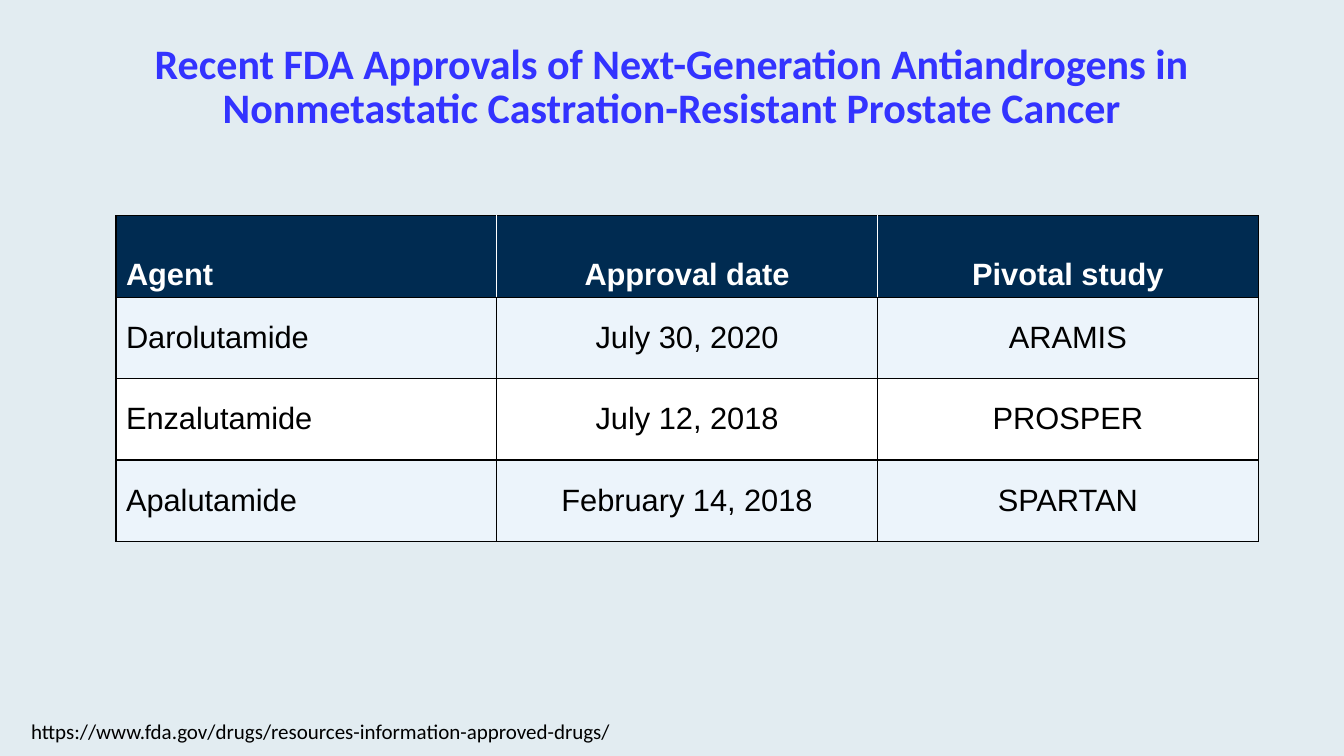
from dataclasses import dataclass

from lxml.etree import SubElement
from pptx import Presentation
from pptx.dml.color import RGBColor
from pptx.enum.text import MSO_ANCHOR, MSO_AUTO_SIZE, PP_ALIGN
from pptx.oxml.ns import qn
from pptx.util import Inches, Pt


@dataclass(frozen=True)
class Theme:
    back: str = "E2ECF1"
    title: str = "3333FF"
    head: str = "002B51"
    band: str = "ECF4FB"
    white: str = "FFFFFF"
    black: str = "000000"
    sans: str = "Calibri"
    grid: str = "Arial"
    large: int = 30
    body: int = 22
    small: int = 15
    rule: int = 1


THEME = Theme()
WIDE, HIGH = Inches(13.33), Inches(7.5)
TITLE = ("Recent FDA Approvals of Next-Generation Antiandrogens in "
         "Nonmetastatic Castration-Resistant Prostate Cancer")
LINK = "https://www.fda.gov/drugs/resources-information-approved-drugs/"
ROWS = [
    ("Agent", "Approval date", "Pivotal study"),
    ("Darolutamide", "July 30, 2020", "ARAMIS"),
    ("Enzalutamide", "July 12, 2018", "PROSPER"),
    ("Apalutamide", "February 14, 2018", "SPARTAN"),
]


def style(para, face, size, color, bold=False):
    para.font.name = face
    para.font.size = Pt(size)
    para.font.bold = bold
    para.font.color.rgb = RGBColor.from_string(color)


def paint(fill, color):
    fill.solid()
    fill.fore_color.rgb = RGBColor.from_string(color)


def edge(cell, sides):
    props = cell._tc.get_or_add_tcPr()
    for spot, (side, color) in enumerate(sides.items()):
        line = SubElement(props, qn(f"a:ln{side}"), w=str(Pt(THEME.rule)))
        fill = SubElement(line, qn("a:solidFill"))
        SubElement(fill, qn("a:srgbClr"), val=color)
        props.insert(spot, line)


def add_title(slide, box):
    shape = slide.shapes.title
    shape.left, shape.top, shape.width, shape.height = box
    frame = shape.text_frame
    frame.text = TITLE
    frame.word_wrap = True
    frame.auto_size = MSO_AUTO_SIZE.NONE
    frame.vertical_anchor = MSO_ANCHOR.MIDDLE
    frame.margin_left = frame.margin_right = 0
    frame.margin_top = frame.margin_bottom = 0
    para = frame.paragraphs[0]
    para.alignment = PP_ALIGN.CENTER
    para.line_spacing = 0.88
    style(para, THEME.sans, THEME.large, THEME.title, True)


def add_grid(slide, box):
    count = len(ROWS[0])
    table = slide.shapes.add_table(len(ROWS), count, *box).table
    for col in table.columns:
        col.width = int(box[2] / count)
    for r, row in enumerate(ROWS):
        table.rows[r].height = int(box[3] / len(ROWS))
        head = r == 0
        shade = THEME.head if head else THEME.band if r % 2 else THEME.white
        inner = THEME.white if head else THEME.black
        for c, text in enumerate(row):
            cell = table.cell(r, c)
            cell.text = text
            cell.vertical_anchor = MSO_ANCHOR.BOTTOM if head else MSO_ANCHOR.MIDDLE
            paint(cell.fill, shade)
            edge(cell, {
                "L": inner if c else THEME.black,
                "R": inner if c < count - 1 else THEME.black,
                "T": THEME.black,
                "B": THEME.black,
            })
            para = cell.text_frame.paragraphs[0]
            para.alignment = PP_ALIGN.CENTER if c else PP_ALIGN.LEFT
            style(para, THEME.grid, THEME.body, inner, head)


def add_source(slide, box):
    frame = slide.shapes.add_textbox(*box).text_frame
    frame.text = LINK
    frame.word_wrap = False
    frame.auto_size = MSO_AUTO_SIZE.SHAPE_TO_FIT_TEXT
    style(frame.paragraphs[0], THEME.sans, THEME.small, THEME.black)


def main():
    deck = Presentation()
    deck.slide_width, deck.slide_height = WIDE, HIGH
    slide = deck.slides.add_slide(deck.slide_layouts.get_by_name("Title Only"))
    paint(slide.background.fill, THEME.back)
    span = Inches(11.33)
    add_title(slide, ((WIDE - span) // 2, Inches(0.25), span, HIGH // 6))
    add_grid(slide, (Inches(1.15), Inches(2.14), span, Inches(3.23)))
    add_source(slide, (Inches(0.21), Inches(7.08), Inches(6), Inches(0.35)))
    deck.save("out.pptx")


if __name__ == "__main__":
    main()
